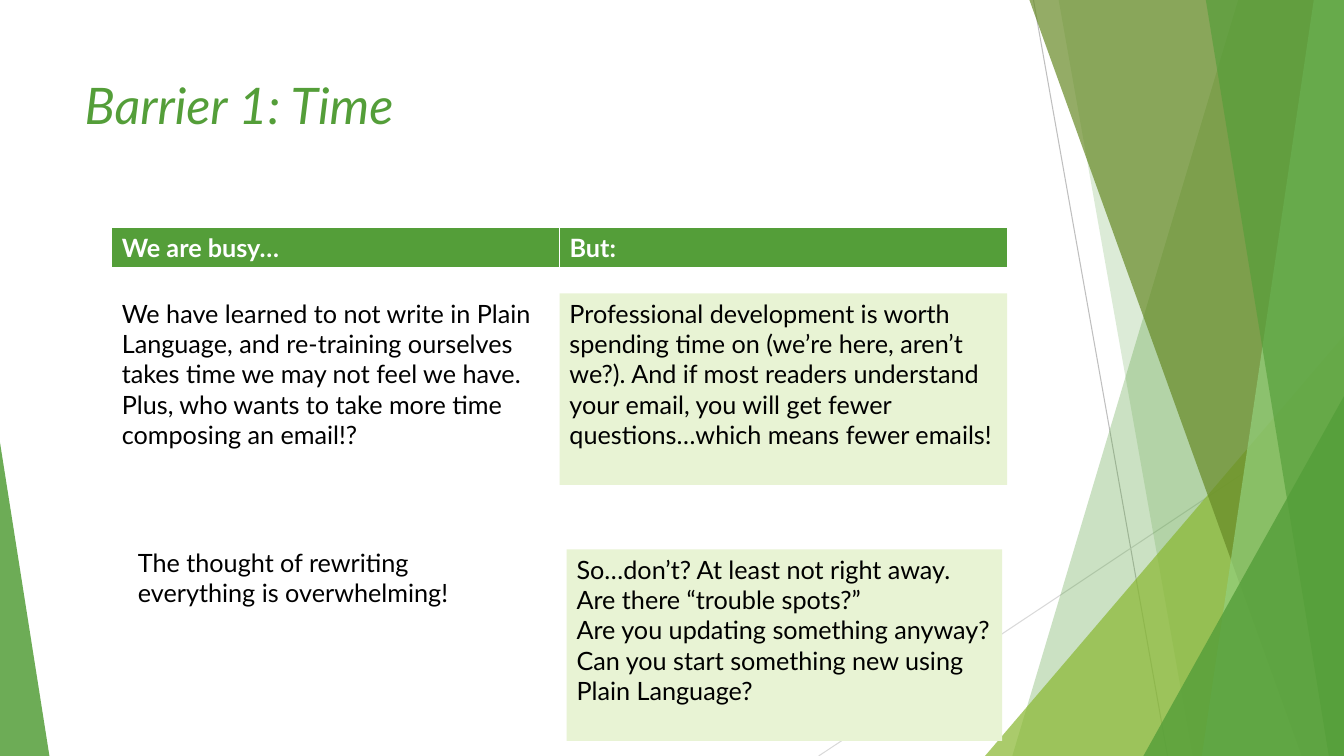
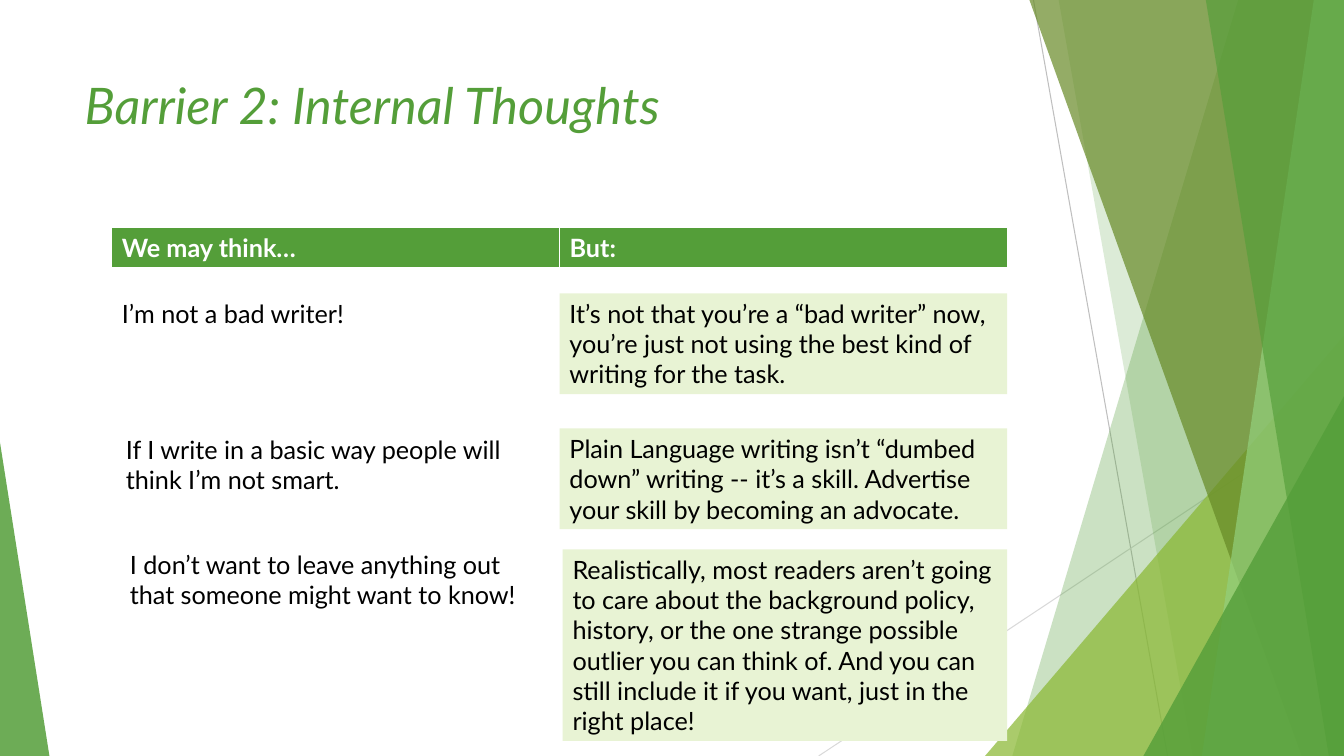
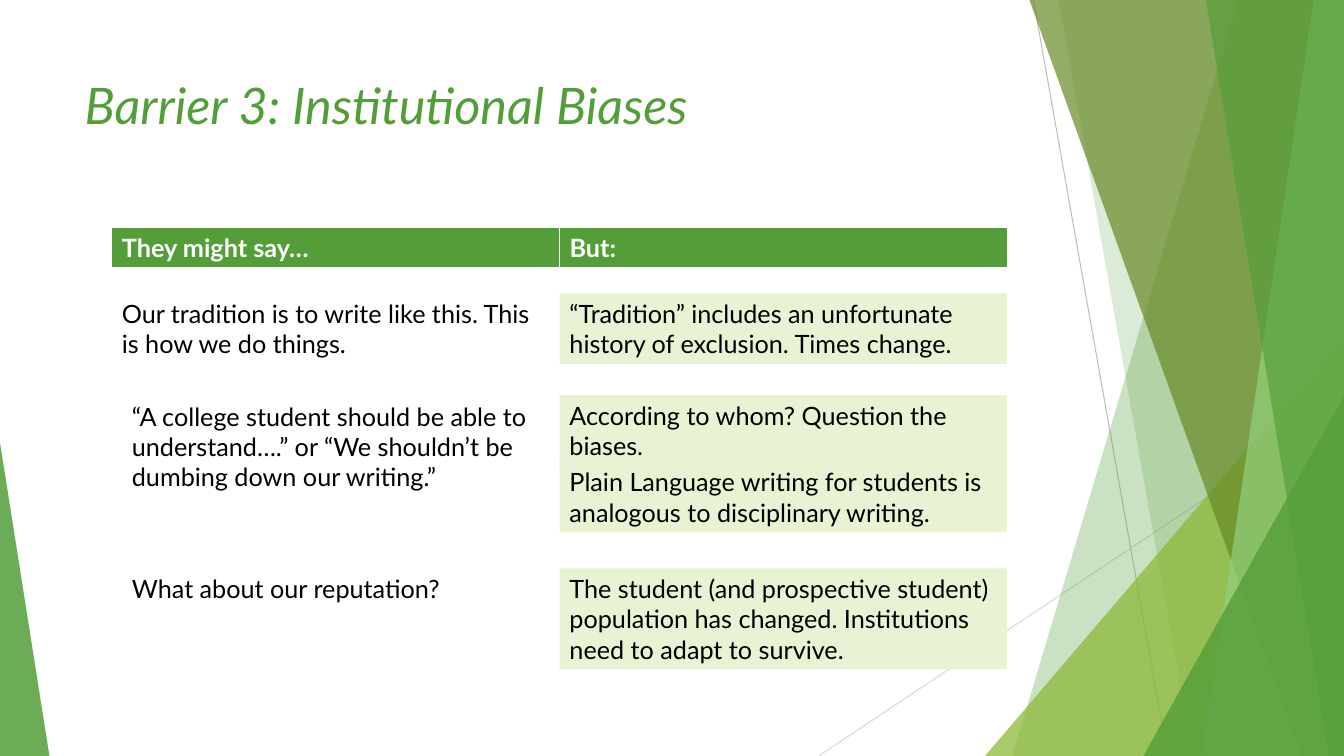
import pptx
import pptx.util
import pptx.dml.color
import pptx.enum.shapes
import pptx.enum.text
import pptx.oxml
import pptx.oxml.ns

Inches = pptx.util.Inches
Pt = pptx.util.Pt
Kind = pptx.enum.shapes.MSO_SHAPE
qn = pptx.oxml.ns.qn

WIDE, HIGH = 13.33, 7.5
HUES = {
    "green": "549E39", "lime": "8AB833", "olive": "678A26", "mint": "93D07D",
    "pale": "E8F3D4", "white": "FFFFFF", "black": "000000",
    "gray": "BFBFBF", "mist": "D9D9D9",
}
LEFT, MID, COL = 1.11, 5.55, 4.44

# Side bands: top x, low x, hue, opacity; each runs to the right edge
BACK = [(12.28, 10.04, "green", 30), (10.5, 11.83, "green", 20)]
FRONT = [(10.21, 12.91, "olive", 70), (13.03, 11.92, "mint", 70),
         (11.96, 13.18, "green", 65)]


class Deck:
    font = "Lato"

    def __init__(self):
        self.prs = pptx.Presentation()
        self.prs.slide_width = Inches(WIDE)
        self.prs.slide_height = Inches(HIGH)
        self.page = None

    def color(self, hue):
        return pptx.dml.color.RGBColor.from_string(HUES[hue])

    def paint(self, shape, hue, alpha=100):
        shape.shadow.inherit = False
        shape.line.fill.background()
        shape.fill.solid()
        shape.fill.fore_color.rgb = self.color(hue)
        if alpha < 100:
            tint = shape._element.spPr.find(qn("a:solidFill"))[0]
            tint.append(pptx.oxml.parse_xml(
                '<a:alpha xmlns:a="http://schemas.openxmlformats.org/'
                f'drawingml/2006/main" val="{alpha * 1000}"/>'))

    def label(self, frame, text, hue, size=18, bold=False, italic=False):
        frame.text = text
        frame.word_wrap = True
        frame.vertical_anchor = pptx.enum.text.MSO_ANCHOR.TOP
        for para in frame.paragraphs:
            para.alignment = pptx.enum.text.PP_ALIGN.LEFT
            for run in para.runs:
                run.font.name = self.font
                run.font.size = Pt(size)
                run.font.bold = bold
                run.font.italic = italic
                run.font.color.rgb = self.color(hue)

    def line(self, x1, y1, x2, y2, hue):
        line = self.page.shapes.add_connector(
            pptx.enum.shapes.MSO_CONNECTOR.STRAIGHT,
            Inches(x1), Inches(y1), Inches(x2), Inches(y2))
        line.line.color.rgb = self.color(hue)
        line.line.width = Pt(0.75)
        line._element.spPr.append(pptx.oxml.parse_xml(
            '<a:effectLst xmlns:a="http://schemas.openxmlformats.org/'
            'drawingml/2006/main"/>'))

    def band(self, top, low, hue, alpha):
        pen = self.page.shapes.build_freeform(Inches(top), 0)
        pen.add_line_segments([
            (Inches(WIDE), 0), (Inches(WIDE), Inches(HIGH)),
            (Inches(low), Inches(HIGH))], close=True)
        self.paint(pen.convert_to_shape(), hue, alpha)

    def wedge(self, x, y, w, peak, hue, alpha):
        shape = self.page.shapes.add_shape(
            Kind.ISOSCELES_TRIANGLE, Inches(x), Inches(y),
            Inches(w), Inches(HIGH - y))
        shape.adjustments[0] = peak
        self.paint(shape, hue, alpha)

    def decor(self):
        self.line(10.25, 0, 11.58, HIGH, "gray")
        self.line(WIDE, 4.03, 8.12, HIGH, "mist")
        for band in BACK:
            self.band(*band)
        self.wedge(9.77, 3.33, 3.56, 1, "lime", 72)
        for band in FRONT:
            self.band(*band)
        self.wedge(11.34, 3.93, 1.99, 1, "green", 80)
        self.wedge(0, 4.39, 0.49, 0, "green", 85)

    def title(self, text):
        box = self.page.shapes.add_textbox(
            Inches(0.74), Inches(0.69), Inches(9.4), Inches(1.44))
        self.label(box.text_frame, text, "green", 36, italic=True)

    def head(self, *names):
        grid = self.page.shapes.add_table(
            1, len(names), Inches(LEFT), Inches(2.26),
            Inches(COL * len(names)), Inches(0.41)).table
        for cell, name in zip(grid.rows[0].cells, names):
            self.label(cell.text_frame, name, "white", bold=True)
            cell.fill.solid()
            cell.fill.fore_color.rgb = self.color("green")
            props = cell._tc.get_or_add_tcPr()
            for spot, (side, width) in enumerate(
                    [("L", 1), ("R", 1), ("T", 1), ("B", 3)]):
                props.insert(spot, pptx.oxml.parse_xml(
                    f'<a:ln{side} xmlns:a="http://schemas.openxmlformats.org/'
                    f'drawingml/2006/main" w="{Pt(width)}"><a:solidFill>'
                    f'<a:srgbClr val="{HUES["white"]}"/></a:solidFill>'
                    f'</a:ln{side}>'))

    def note(self, x, y, w, rows, text, hue=None):
        # Height follows the number of text rows
        spot = [Inches(v) for v in (x, y, w, 0.1 + 0.3 * rows)]
        if hue:
            box = self.page.shapes.add_shape(Kind.RECTANGLE, *spot)
            self.paint(box, hue)
        else:
            box = self.page.shapes.add_textbox(*spot)
        self.label(box.text_frame, text, "black")

    def slide(self, title, head, says, buts):
        self.page = self.prs.slides.add_slide(self.prs.slide_layouts[6])
        self.decor()
        for but in buts:
            self.note(*but, hue="pale")
        for say in says:
            self.note(*say)
        self.head(head, "But:")
        self.title(title)


# Notes: left, top, width, text rows, text
SLIDES = [
    ("Barrier 1: Time", "We are busy…", [
        (LEFT, 2.91, 4.45, 5,
         "We have learned to not write in Plain Language, and re-training "
         "ourselves takes time we may not feel we have. Plus, who wants to "
         "take more time composing an email!?"),
        (1.27, 5.38, 4.04, 2,
         "The thought of rewriting everything is overwhelming!"),
    ], [
        (MID, 2.91, COL, 6,
         "Professional development is worth spending time on (we’re here, "
         "aren’t we?). And if most readers understand your email, you will "
         "get fewer questions…which means fewer emails!"),
        (5.62, 5.45, 4.32, 6,
         "So…don’t? At least not right away.\n"
         "Are there “trouble spots?”\n"
         "Are you updating something anyway?\n"
         "Can you start something new using Plain Language?"),
    ]),
    ("Barrier 2: Internal Thoughts", "We may think…", [
        (LEFT, 2.91, 4.32, 1, "I’m not a bad writer!"),
        (1.15, 4.26, 4.28, 2,
         "If I write in a basic way people will think I’m not smart."),
        (1.19, 5.4, 4.24, 2,
         "I don’t want to leave anything out that someone might want to "
         "know!"),
    ], [
        (MID, 2.91, COL, 3,
         "It’s not that you’re a “bad writer” now, you’re just not using "
         "the best kind of writing for the task."),
        (MID, 4.25, COL, 3,
         "Plain Language writing isn’t “dumbed down” writing -- it’s a "
         "skill. Advertise your skill by becoming an advocate."),
        (5.58, 5.45, 4.41, 6,
         "Realistically, most readers aren’t going to care about the "
         "background policy, history, or the one strange possible outlier "
         "you can think of. And you can still include it if you want, just "
         "in the right place!"),
    ]),
    ("Barrier 3: Institutional Biases", "They might say…", [
        (LEFT, 2.91, 4.45, 2,
         "Our tradition is to write like this. This is how we do things."),
        (1.21, 3.93, 4.28, 3,
         "“A college student should be able to understand….” or “We "
         "shouldn’t be dumbing down our writing.”"),
        (1.21, 5.64, 4.28, 1, "What about our reputation?"),
    ], [
        (MID, 2.91, COL, 2,
         "“Tradition” includes an unfortunate history of exclusion. Times "
         "change."),
        (MID, 3.92, COL, 2, "According to whom? Question the biases."),
        (MID, 4.58, COL, 2,
         "Plain Language writing for students is analogous to disciplinary "
         "writing."),
        (MID, 5.64, COL, 3,
         "The student (and prospective student) population has changed. "
         "Institutions need to adapt to survive."),
    ]),
]


def main():
    deck = Deck()
    for item in SLIDES:
        deck.slide(*item)
    deck.prs.save("out.pptx")


if __name__ == "__main__":
    main()
